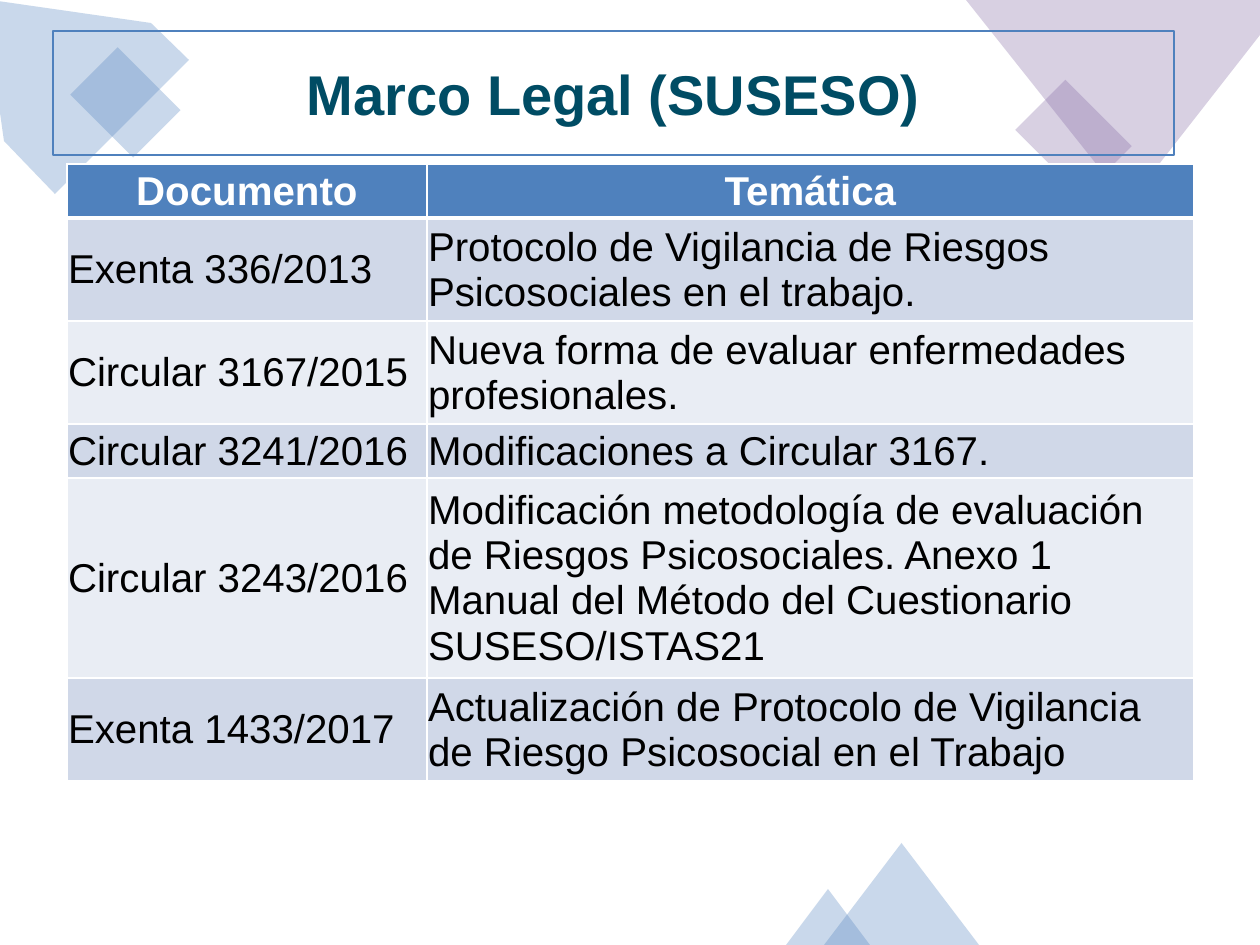
from lxml.etree import SubElement
from pptx import Presentation
from pptx.dml.color import RGBColor
from pptx.enum.shapes import MSO_SHAPE
from pptx.enum.text import MSO_ANCHOR, MSO_AUTO_SIZE, PP_ALIGN
from pptx.oxml.ns import qn
from pptx.util import Pt

PX = 914400 / 126
COLORS = {
    "blue": "4F81BD", "purple": "8064A2", "teal": "004C64", "white": "FFFFFF",
    "black": "000000", "band1": "D0D8E8", "band2": "E9EDF4",
}


def px(*values):
    return [round(v * PX) for v in values]


def write(p, text, color, align, **font):
    p.alignment = align
    r = p.add_run()
    r.text = text
    for name, value in font.items():
        setattr(r.font, name, value)
    r.font.name = "Arial"
    r.font.color.rgb = RGBColor.from_string(COLORS[color])


prs = Presentation()
prs.slide_width, prs.slide_height = px(1260, 945)
s = prs.slides.add_slide(prs.slide_layouts[5])

corner_left = [(151, 23), (-16, -1), (4, 141), (55, 194), (189, 60)]
corner_right = [(1260, 0), (966, 0), (1128, 204), (1260, 35)]
decor = [
    ("blue", corner_left, None, 0),
    ("blue", MSO_SHAPE.RECTANGLE, (92, 58, 67, 89), 315),
    ("purple", MSO_SHAPE.RECTANGLE, (1038, 91, 71, 94), 315),
    ("purple", corner_right, None, 0),
    ("blue", MSO_SHAPE.ISOSCELES_TRIANGLE, (824, 843, 155, 102), 0),
    ("blue", MSO_SHAPE.ISOSCELES_TRIANGLE, (786, 889, 84, 56), 0),
]
for color, outline, box, rotation in decor:
    if box:
        sp = s.shapes.add_shape(outline, *px(*box))
    else:
        builder = s.shapes.build_freeform(*outline[0], scale=PX)
        builder.add_line_segments(outline[1:], close=True)
        sp = builder.convert_to_shape()
    sp.rotation = rotation
    sp.shadow.inherit = False
    sp.line.fill.background()
    sp.fill.solid()
    sp.fill.fore_color.rgb = RGBColor.from_string(COLORS[color])
    clr = sp.element.spPr.find(".//" + qn("a:srgbClr"))
    SubElement(clr, qn("a:alpha"), val="30000")

rows = [
    (54, "Documento", "Temática"),
    (103, "Exenta 336/2013",
     "Protocolo de Vigilancia de Riesgos Psicosociales en el trabajo."),
    (103, "Circular 3167/2015",
     "Nueva forma de evaluar enfermedades profesionales."),
    (54, "Circular 3241/2016", "Modificaciones a Circular 3167."),
    (200, "Circular 3243/2016",
     "Modificación metodología de evaluación de Riesgos Psicosociales. "
     "Anexo 1 Manual del Método del Cuestionario SUSESO/ISTAS21"),
    (103, "Exenta 1433/2017",
     "Actualización de Protocolo de Vigilancia de Riesgo Psicosocial "
     "en el Trabajo"),
]
widths = [360, 767]
height = sum(row[0] for row in rows)
table = s.shapes.add_table(
    len(rows), len(widths), *px(67, 164, sum(widths), height)).table
table.horz_banding = False
for col, width in zip(table.columns, px(*widths)):
    col.width = width

margin, = px(1)
cell_format = {
    "margin_left": margin, "margin_right": margin, "margin_top": margin,
    "margin_bottom": 0, "vertical_anchor": MSO_ANCHOR.MIDDLE,
}
for i, (row_height, *texts) in enumerate(rows):
    table.rows[i].height, = px(row_height)
    header = i == 0
    fill = "blue" if header else "band1" if i % 2 else "band2"
    for j, text in enumerate(texts):
        cell = table.cell(i, j)
        for name, value in cell_format.items():
            setattr(cell, name, value)
        tcPr = cell._tc.get_or_add_tcPr()
        for side in "LRTB":
            thick = (header and side == "B") or (i == 1 and side == "T")
            ln = SubElement(tcPr, qn("a:ln" + side), w=str(Pt(3 if thick else 1)))
            SubElement(SubElement(ln, qn("a:solidFill")), qn("a:srgbClr"),
                       val=COLORS["white"])
        cell.fill.solid()
        cell.fill.fore_color.rgb = RGBColor.from_string(COLORS[fill])
        write(cell.text_frame.paragraphs[0], text,
              "white" if header else "black",
              PP_ALIGN.CENTER if header else PP_ALIGN.LEFT,
              size=Pt(23), bold=header)

title = s.shapes.title
title.left, title.top, title.width, title.height = px(53, 31, 1121, 124)
title.line.color.rgb = RGBColor.from_string(COLORS["blue"])
title.line.width = Pt(0.75)
tf = title.text_frame
frame_format = {
    "word_wrap": True, "auto_size": MSO_AUTO_SIZE.NONE,
    "vertical_anchor": MSO_ANCHOR.MIDDLE,
}
for name, value in frame_format.items():
    setattr(tf, name, value)
write(tf.paragraphs[0], "Marco Legal (SUSESO)", "teal", PP_ALIGN.CENTER,
      size=Pt(32), bold=True)
title.element.getparent().append(title.element)

prs.save("out.pptx")
